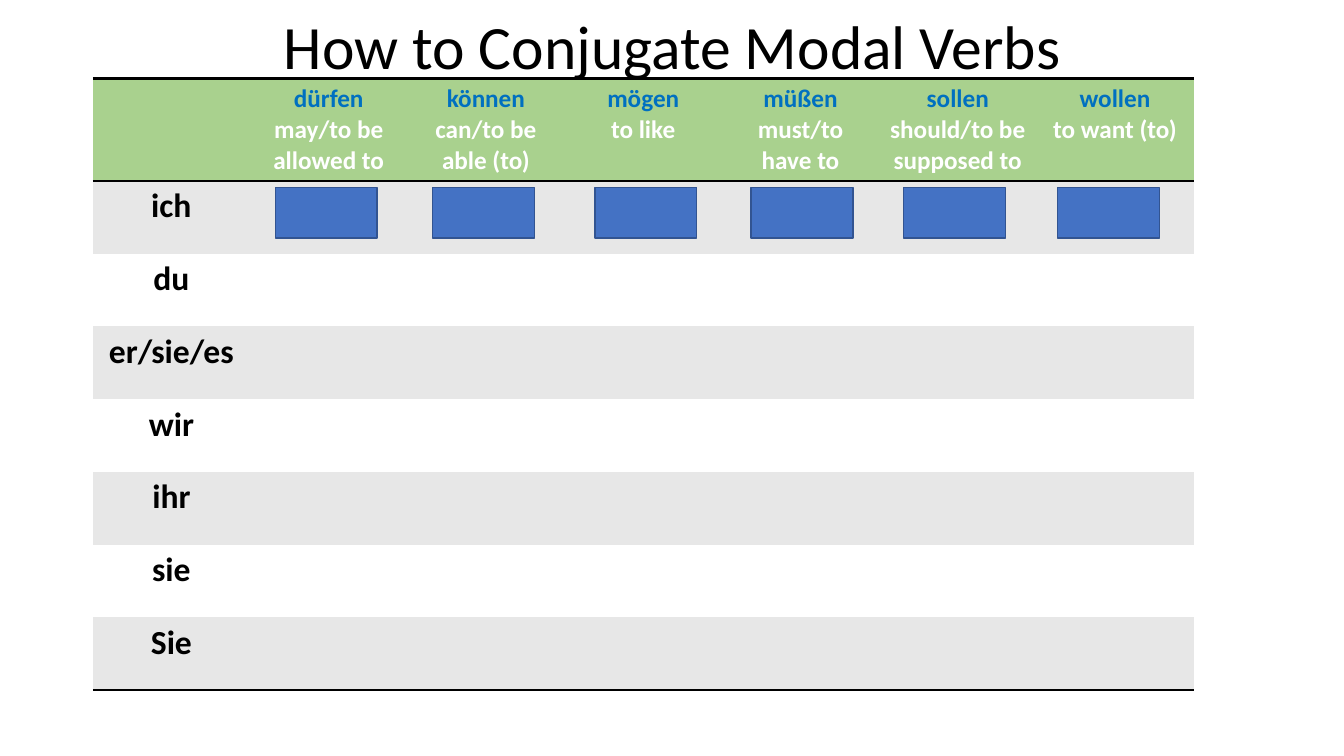
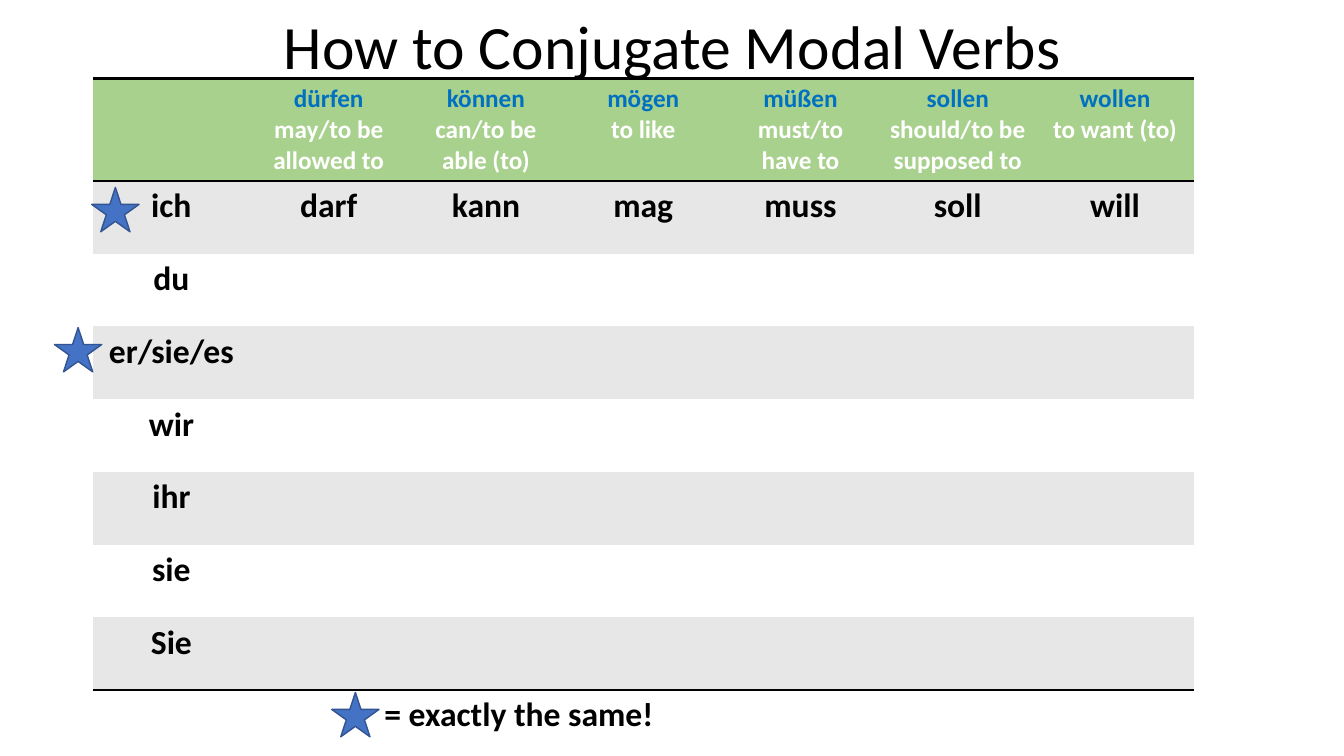
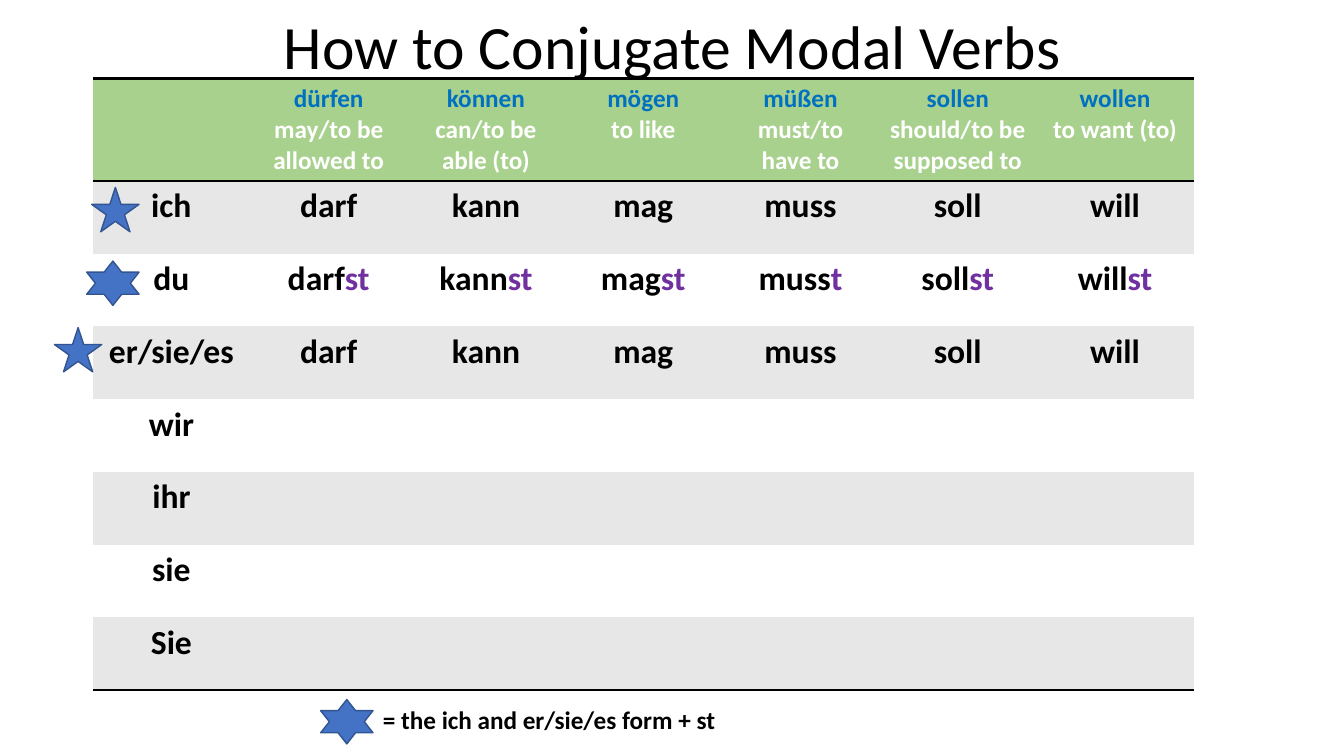
from lxml import etree
from pptx import Presentation
from pptx.dml.color import RGBColor
from pptx.enum.shapes import MSO_SHAPE as SHAPE
from pptx.enum.text import MSO_ANCHOR as ANCHOR, MSO_AUTO_SIZE as AUTO, PP_ALIGN as ALIGN
from pptx.oxml.ns import qn
from pptx.util import Inches, Pt

COLORS = {
    "black": "000000", "white": "FFFFFF", "header": "A9D18E", "band": "E7E7E7",
    "verb": "0070C0", "ending": "7030A0", "shape": "4472C4", "outline": "325491",
}
FONT = "Calibri"
NO_STYLE = "{2D5ABB26-0587-4C30-8999-92F81FD0307C}"

# Verb, meaning, stem and du-ending of each column
VERBS = [
    ("dürfen", "may/to be allowed to", "darf", "st"),
    ("können", "can/to be able (to)", "kann", "st"),
    ("mögen", "to like", "mag", "st"),
    ("müßen", "must/to have to", "muss", "t"),
    ("sollen", "should/to be supposed to", "soll", "st"),
    ("wollen", "to want (to)", "will", "st"),
]
PRONOUNS = ["ich", "du", "er/sie/es", "wir", "ihr", "sie", "Sie"]

TABLE_LEFT, TABLE_TOP, TABLE_HEIGHT = 0.92, 0.78, 6.06
COL_WIDTH, HEADER_HEIGHT = 1.56, 1.01
ROW_HEIGHT = (TABLE_HEIGHT - HEADER_HEIGHT) / len(PRONOUNS)


def rgb(name):
    return RGBColor.from_string(COLORS[name])


class Deck:
    """Holds the shared style and the current slide."""

    def __init__(self):
        self.prs = Presentation()
        self.prs.slide_width, self.prs.slide_height = Inches(13.33), Inches(7.5)
        self.slide = None

    def new_slide(self, title):
        self.slide = self.prs.slides.add_slide(self.prs.slide_layouts[5])
        sp = self.slide.shapes.title
        sp.left, sp.top, sp.width, sp.height = map(Inches, (0.92, 0, 11.5, 0.98))
        tf = sp.text_frame
        tf.auto_size, tf.vertical_anchor = AUTO.NONE, ANCHOR.MIDDLE
        p = tf.paragraphs[0]
        p.line_spacing = 0.9
        self.add_text(p, [(title, "black")], 44, bold=False)

    def add_text(self, p, runs, size, bold=True, align=ALIGN.CENTER):
        p.alignment = align
        p.font.name, p.font.size, p.font.bold = FONT, Pt(size), bold
        for text, color in runs:
            r = p.add_run()
            r.text = text
            r.font.color.rgb = rgb(color)

    def border(self, cell, side):
        ln = etree.SubElement(cell._tc.get_or_add_tcPr(), qn(f"a:ln{side}"), w=str(Pt(2)))
        fill = etree.SubElement(ln, qn("a:solidFill"))
        etree.SubElement(fill, qn("a:srgbClr"), val=COLORS["black"])

    def cell(self, cell, fill, sides=""):
        for side in sides:
            self.border(cell, side)
        cell.fill.solid()
        cell.fill.fore_color.rgb = rgb(fill)

    def verb_table(self, filled):
        """Draw the grid; only the pronouns in filled get their verb forms."""
        cols = len(VERBS) + 1
        frame = self.slide.shapes.add_table(
            len(PRONOUNS) + 1, cols, Inches(TABLE_LEFT), Inches(TABLE_TOP),
            Inches(COL_WIDTH * cols), Inches(TABLE_HEIGHT))
        table = frame.table
        table.first_row = table.horz_banding = False
        table._tbl.tblPr.find(qn("a:tableStyleId")).text = NO_STYLE
        for col in table.columns:
            col.width = Inches(COL_WIDTH)
        for i, row in enumerate(table.rows):
            row.height = Inches(ROW_HEIGHT if i else HEADER_HEIGHT)

        # Header
        for c in range(cols):
            self.cell(table.cell(0, c), "header", "TB")
        for c, (verb, meaning, _, _) in enumerate(VERBS, 1):
            tf = table.cell(0, c).text_frame
            self.add_text(tf.paragraphs[0], [(verb, "verb")], 18)
            self.add_text(tf.add_paragraph(), [(meaning, "white")], 18)

        # Pronoun rows
        for i, pronoun in enumerate(PRONOUNS, 1):
            texts = [[(pronoun, "black")]]
            for _, _, stem, ending in VERBS:
                runs = [(stem, "black")] if pronoun in filled else []
                if runs and pronoun == "du":
                    runs.append((ending, "ending"))
                texts.append(runs)
            for c, runs in enumerate(texts):
                cell = table.cell(i, c)
                self.cell(cell, "band" if i % 2 else "white",
                          "B" if i == len(PRONOUNS) else "")
                if runs:
                    self.add_text(cell.text_frame.paragraphs[0], runs, 24)

    def shape(self, kind, left, top, width, height):
        sp = self.slide.shapes.add_shape(kind, *map(Inches, (left, top, width, height)))
        sp.shadow.inherit = False
        sp.fill.solid()
        sp.fill.fore_color.rgb = rgb("shape")
        sp.line.color.rgb = rgb("outline")
        sp.line.width = Pt(1)

    def star5(self, left, top):
        self.shape(SHAPE.STAR_5_POINT, left, top, 0.47, 0.44)

    def star6(self, left, top):
        self.shape(SHAPE.STAR_6_POINT, left, top, 0.52, 0.44)

    def same_form_stars(self):
        self.star5(0.91, 1.86)
        self.star5(0.54, 3.25)

    def legend(self, text, left, top, width, height, size, align):
        sp = self.slide.shapes.add_textbox(*map(Inches, (left, top, width, height)))
        tf = sp.text_frame
        tf.word_wrap, tf.auto_size = True, AUTO.SHAPE_TO_FIT_TEXT
        self.add_text(tf.paragraphs[0], [(text, "black")], size, align=align)


def main():
    deck = Deck()
    title = "How to Conjugate Modal Verbs"

    # Slide 1: blank grid with a button per verb
    deck.new_slide(title)
    deck.verb_table([])
    for left in (2.73, 4.29, 5.9, 7.45, 8.96, 10.49):
        deck.shape(SHAPE.ACTION_BUTTON_CUSTOM, left, 1.86, 1.01, 0.5)

    # Slide 2: ich forms
    deck.new_slide(title)
    deck.verb_table(["ich"])
    deck.same_form_stars()
    deck.star5(3.29, 6.87)
    deck.legend("= exactly the same! ", 2.88, 6.83, 4.61, 0.5, 24, ALIGN.CENTER)

    # Slide 3: du and er/sie/es forms
    deck.new_slide(title)
    deck.verb_table(["ich", "du", "er/sie/es"])
    deck.same_form_stars()
    deck.star6(0.86, 2.59)
    deck.star6(3.18, 6.94)
    deck.legend("= the ich and er/sie/es form + st", 3.7, 6.94, 3.71, 0.4, 18, ALIGN.LEFT)

    deck.prs.save("out.pptx")


if __name__ == "__main__":
    main()
